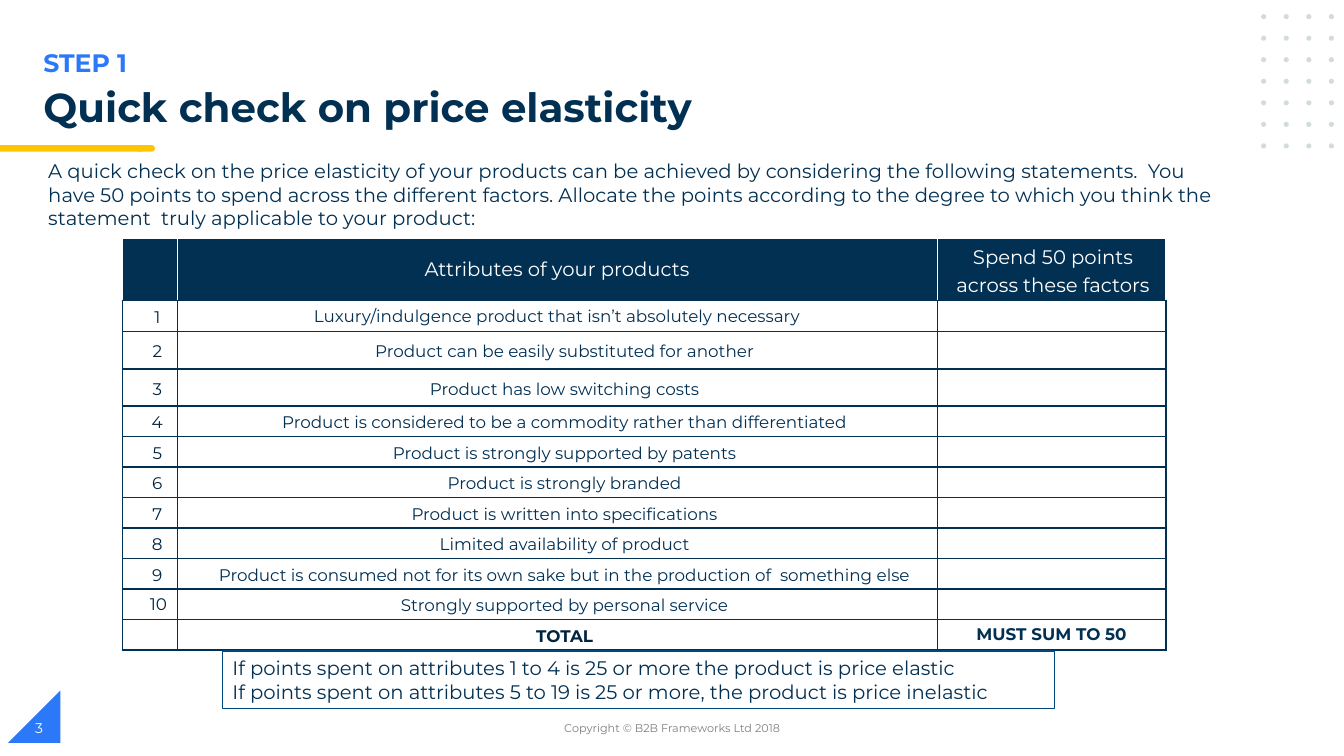
from dataclasses import dataclass
from itertools import product
from typing import Optional

from lxml import etree
from pptx import Presentation, util as u
from pptx.dml.color import RGBColor
from pptx.enum import shapes, text
from pptx.oxml import ns

NAVY = RGBColor(0x02, 0x30, 0x53)
INK = RGBColor(0x01, 0x24, 0x3E)
BLUE = RGBColor(0x2B, 0x79, 0xF8)
YELLOW = RGBColor(0xFF, 0xC6, 0x00)
DOT = RGBColor(0xD1, 0xDB, 0xE0)
NOTE_LINE = RGBColor(0x01, 0x48, 0x7C)
GRAY = RGBColor(0x7F, 0x7F, 0x7F)
WHITE = RGBColor(0xFF, 0xFF, 0xFF)
FONT = "Montserrat"
WIDTH, HEIGHT = u.Inches(13.33), u.Inches(7.5)
CENTER, RIGHT = text.PP_ALIGN.CENTER, text.PP_ALIGN.RIGHT
MIDDLE = text.MSO_ANCHOR.MIDDLE
Shape = shapes.MSO_SHAPE


def across(percent: float) -> u.Emu:
    return u.Emu(round(WIDTH * percent / 100))


def down(percent: float) -> u.Emu:
    return u.Emu(round(HEIGHT * percent / 100))


@dataclass(frozen=True)
class Box:
    """A place on the slide, in percent of its width and height."""
    left: float
    top: float
    width: float
    height: float

    def emu(self) -> tuple:
        return across(self.left), down(self.top), across(self.width), down(self.height)


@dataclass(frozen=True)
class Entry:
    """The content and format of one table cell."""
    words: str = ""
    color: RGBColor = NAVY
    size: float = 12
    bold: bool = False
    align: text.PP_ALIGN = CENTER
    indent: float = 0.15
    spacing: Optional[float] = 1.15


def write(frame, words: str, *, size: float, color: RGBColor = NAVY, bold: bool = False,
          align=None, spacing: Optional[float] = None, indent: float = 0) -> None:
    frame.word_wrap = True
    for index, line in enumerate(words.split("\n")):
        paragraph = frame.add_paragraph() if index else frame.paragraphs[0]
        paragraph.alignment = align
        paragraph.line_spacing = spacing
        if indent:
            paragraph._p.get_or_add_pPr().set("marL", str(u.Inches(indent)))
        run = paragraph.add_run()
        run.text = line
        run.font.name, run.font.size = FONT, u.Pt(size)
        run.font.bold, run.font.color.rgb = bold, color


def add_figure(slide, kind: Shape, box: Box, fill: Optional[RGBColor] = None,
               line: Optional[RGBColor] = None):
    figure = slide.shapes.add_shape(kind, *box.emu())
    figure.shadow.inherit = False
    if fill is None:
        figure.fill.background()
    else:
        figure.fill.solid()
        figure.fill.fore_color.rgb = fill
    if line is None:
        figure.line.fill.background()
    else:
        figure.line.color.rgb = line
        figure.line.width = u.Pt(1)
    return figure


def add_text(slide, box: Box, words: str, anchor=text.MSO_ANCHOR.TOP, **style) -> None:
    frame = slide.shapes.add_textbox(*box.emu()).text_frame
    frame.vertical_anchor = anchor
    write(frame, words, **style)


def set_borders(cell, color: RGBColor) -> None:
    properties = cell._tc.get_or_add_tcPr()
    for position, side in enumerate(("lnL", "lnR", "lnT", "lnB")):
        line = etree.Element(ns.qn(f"a:{side}"), w=str(u.Pt(1)))
        fill = etree.SubElement(line, ns.qn("a:solidFill"))
        etree.SubElement(fill, ns.qn("a:srgbClr"), val=str(color))
        properties.insert(position, line)


def fill_cell(cell, entry: Entry, heading: bool) -> None:
    cell.margin_top = cell.margin_bottom = 0
    cell.vertical_anchor = MIDDLE
    if heading:
        cell.fill.solid()
        cell.fill.fore_color.rgb = NAVY
    else:
        cell.fill.background()
    set_borders(cell, WHITE if heading else NAVY)
    if entry.words:
        write(cell.text_frame, entry.words, size=entry.size, color=entry.color,
              bold=entry.bold, align=entry.align, spacing=entry.spacing,
              indent=entry.indent)


ATTRIBUTES = (
    "Luxury/indulgence product that isn’t absolutely necessary",
    "Product can be easily substituted for another",
    "Product has low switching costs",
    "Product is considered to be a commodity rather than differentiated",
    "Product is strongly supported by patents",
    "Product is strongly branded",
    "Product is written into specifications",
    "Limited availability of product",
    "Product is consumed not for its own sake but in the production of  something else",
    "Strongly supported by personal service",
)
COLUMNS = (4.08, 56.55, 17.03)
ROWS = (8.1, 4.2, 4.9, 4.9) + (4.04,) * 8


def score_rows() -> list:
    rows = [(Entry(),
             Entry("Attributes of your products", WHITE, 14, indent=0, spacing=None),
             Entry("Spend 50 points across these factors", WHITE, 14, indent=0.03))]
    for number, attribute in enumerate(ATTRIBUTES, 1):
        if number == len(ATTRIBUTES):
            label = Entry(str(number), INK, align=RIGHT, indent=0, spacing=None)
        else:
            label = Entry(str(number), INK)
        statement = Entry(attribute) if number > 1 else Entry(attribute, indent=0, spacing=None)
        rows.append((label, statement, Entry()))
    rows.append((Entry(), Entry("TOTAL", INK, bold=True),
                 Entry("MUST SUM TO 50", bold=True, indent=0, spacing=None)))
    return rows


def add_score_table(slide) -> None:
    place = Box(9.1, 31.6, sum(COLUMNS), sum(ROWS))
    table = slide.shapes.add_table(len(ROWS), len(COLUMNS), *place.emu()).table
    table.first_row = table.horz_banding = False
    for column, width in zip(table.columns, COLUMNS):
        column.width = across(width)
    for row, height in zip(table.rows, ROWS):
        row.height = down(height)
    for r, entries in enumerate(score_rows()):
        for c, entry in enumerate(entries):
            fill_cell(table.cell(r, c), entry, heading=r == 0)


def add_decoration(slide) -> None:
    corner = add_figure(slide, Shape.RIGHT_TRIANGLE, Box(0.6, 91.9 - 0.55, 3.9, 6.93), BLUE)
    corner._element.spPr.get_or_add_xfrm().set("flipH", "1")
    for column, row in product(range(4), range(7)):
        add_figure(slide, Shape.OVAL,
                   Box(93.83 + 1.68 * column, 1.87 + 2.85 * row, 0.38, 0.67), DOT)
    add_figure(slide, Shape.FLOWCHART_TERMINATOR, Box(10.1, 19.2, 1.43, 0.87), YELLOW)
    add_figure(slide, Shape.RECTANGLE, Box(0, 19.2, 10.58, 0.87), YELLOW)


def main() -> None:
    deck = Presentation()
    deck.slide_width, deck.slide_height = WIDTH, HEIGHT
    slide = deck.slides.add_slide(deck.slide_layouts[5])
    add_decoration(slide)
    add_text(slide, Box(2.48, 5.6, 50.2, 5.33), "STEP 1", size=18, color=BLUE, bold=True)

    title = slide.shapes.title
    title.left, title.top, title.width, title.height = Box(2.48, 10.93, 68.9, 7.47).emu()
    title.text_frame.auto_size = text.MSO_AUTO_SIZE.NONE
    title.text_frame.vertical_anchor = text.MSO_ANCHOR.TOP
    write(title.text_frame, "Quick check on price elasticity", size=28.8, bold=True,
          align=text.PP_ALIGN.LEFT, spacing=0.9)

    add_text(slide, Box(2.85, 20.4, 89.4, 10.8),
             "A quick check on the price elasticity of your products can be achieved by "
             "considering the following statements.  You have 50 points to spend across the "
             "different factors. Allocate the points according to the degree to which you "
             "think the statement  truly applicable to your product:", size=14)
    add_score_table(slide)

    verdict = add_figure(slide, Shape.RECTANGLE, Box(16.55, 86.13, 61.9, 7.6), line=NOTE_LINE)
    verdict.text_frame.vertical_anchor = text.MSO_ANCHOR.TOP
    write(verdict.text_frame,
          "If points spent on attributes 1 to 4 is 25 or more the product is price elastic\n"
          "If points spent on attributes 5 to 19 is 25 or more, the product is price inelastic",
          size=14, align=text.PP_ALIGN.LEFT)

    add_text(slide, Box(33.15, 93.6, 33.75, 5.33), "Copyright © B2B Frameworks Ltd 2018",
             MIDDLE, size=8, color=GRAY, align=CENTER)
    add_text(slide, Box(1.88, 93.6, 22.5, 5.33), "3", MIDDLE, size=10, color=WHITE)
    deck.save("out.pptx")


if __name__ == "__main__":
    main()
